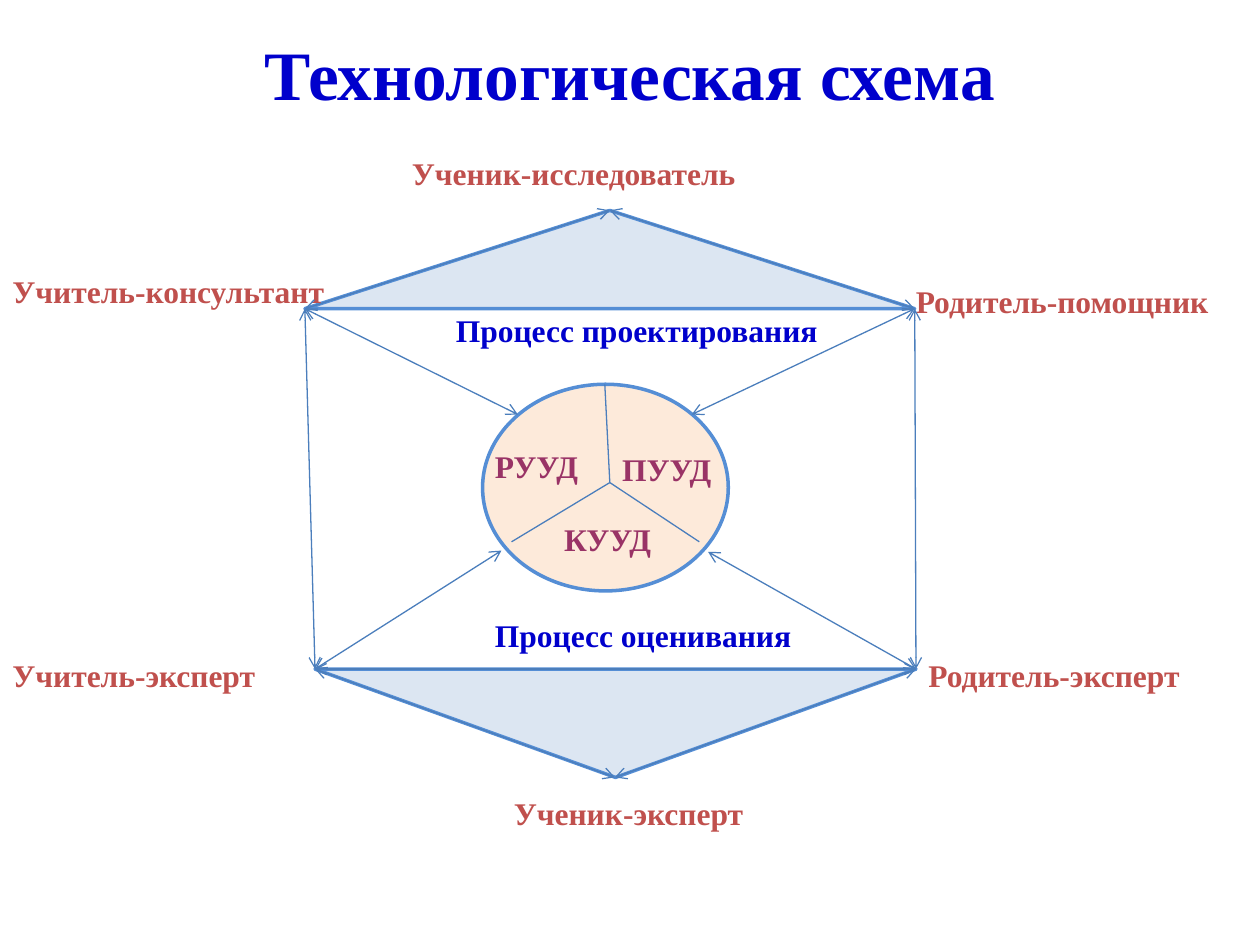
from lxml.etree import SubElement
from pptx import Presentation
from pptx.dml.color import RGBColor
from pptx.enum.shapes import MSO_CONNECTOR, MSO_SHAPE
from pptx.enum.text import MSO_ANCHOR, MSO_AUTO_SIZE, PP_ALIGN
from pptx.oxml.ns import qn
from pptx.util import Inches, Pt

THEME = {
    "font": "Times New Roman",
    "title_size": 39.6,
    "label_size": 18,
    "outline_width": 2,
    "link_width": 0.75,
    "heading": "0000CC",
    "role": "C0504D",
    "skill": "993366",
    "triangle": "DCE6F2",
    "circle": "FDEADA",
    "outline": "558ED5",
    "link": "4B7EBC",
}

TITLE = "Технологическая схема"

# text, theme colour, left, top, width
LABELS = [
    ("ПУУД", "skill", 4.84, 3.52, 1.16),
    ("КУУД", "skill", 4.38, 4.08, 1.04),
    ("РУУД", "skill", 3.83, 3.5, 0.93),
    ("Учитель-консультант", "role", 0, 2.11, 3.08),
    ("Учитель-эксперт", "role", 0, 5.16, 2.5),
    ("Ученик-исследователь", "role", 3.17, 1.17, 3.74),
    ("Ученик-эксперт", "role", 3.98, 6.25, 2.34),
    ("Родитель-эксперт", "role", 7.27, 5.16, 2.73),
    ("Родитель-помощник", "role", 7.17, 2.19, 3.17),
    ("Процесс проектирования", "heading", 3.52, 2.42, 3.57),
    ("Процесс оценивания", "heading", 3.83, 4.84, 3.05),
]
LABEL_HEIGHT = 0.4

# Corners of the two triangles
CONSULTANT, RESEARCHER, HELPER = (2.42, 2.45), (4.84, 1.67), (7.26, 2.45)
TEACHER_EXPERT, PUPIL_EXPERT, PARENT_EXPERT = (2.5, 5.31), (4.88, 6.17), (7.27, 5.31)

# shape, fill, left, top, width, height, rotation
SHAPES = [
    (MSO_SHAPE.ISOSCELES_TRIANGLE, "triangle", 2.42, 1.67, 4.84, 0.78, 0),
    (MSO_SHAPE.ISOSCELES_TRIANGLE, "triangle", 2.5, 5.31, 4.77, 0.86, 180),
    (MSO_SHAPE.FLOWCHART_CONNECTOR, "circle", 3.83, 3.05, 1.95, 1.64, 0),
]

HUB = (4.84, 3.83)
SECTOR_ENDS = [(4.8, 3.05), (4.06, 4.3), (5.55, 4.3)]

TWO_WAY_LINKS = [
    (CONSULTANT, (4.11, 3.29)),
    (HELPER, (5.49, 3.29)),
    (TEACHER_EXPERT, (3.98, 4.37)),
    (PARENT_EXPERT, (5.62, 4.38)),
    (CONSULTANT, RESEARCHER),
    (RESEARCHER, HELPER),
    (TEACHER_EXPERT, PARENT_EXPERT),
    (TEACHER_EXPERT, PUPIL_EXPERT),
    (PARENT_EXPERT, PUPIL_EXPERT),
    (HELPER, PARENT_EXPERT),
    (CONSULTANT, TEACHER_EXPERT),
]


def colour(name):
    return RGBColor.from_string(THEME[name])


def add_span(para, text, size, colour_name):
    span = para.add_run()
    span.text = text
    span.font.name = THEME["font"]
    span.font.size = Pt(THEME[size])
    span.font.bold = True
    span.font.color.rgb = colour(colour_name)


def set_title(page):
    box = page.shapes.title
    box.left, box.top, box.width, box.height = map(Inches, (0.5, 0.3, 9, 0.56))
    box.text_frame.vertical_anchor = MSO_ANCHOR.MIDDLE
    para = box.text_frame.paragraphs[0]
    para.alignment = PP_ALIGN.CENTER
    add_span(para, TITLE, "title_size", "heading")


def add_outlined(page, kind, fill, left, top, width, height, rotation):
    shape = page.shapes.add_shape(kind, *map(Inches, (left, top, width, height)))
    shape.rotation = rotation
    shape.shadow.inherit = False
    shape.fill.solid()
    shape.fill.fore_color.rgb = colour(fill)
    shape.line.color.rgb = colour("outline")
    shape.line.width = Pt(THEME["outline_width"])


def add_label(page, text, colour_name, left, top, width):
    box = page.shapes.add_textbox(*map(Inches, (left, top, width, LABEL_HEIGHT)))
    box.text_frame.word_wrap = True
    box.text_frame.auto_size = MSO_AUTO_SIZE.SHAPE_TO_FIT_TEXT
    add_span(box.text_frame.paragraphs[0], text, "label_size", colour_name)


def add_link(page, start, end, two_way=False):
    link = page.shapes.add_connector(MSO_CONNECTOR.STRAIGHT, *map(Inches, start + end))
    link.line.color.rgb = colour("link")
    link.line.width = Pt(THEME["link_width"])
    if two_way:
        for tag in ("a:headEnd", "a:tailEnd"):
            SubElement(link.line._get_or_add_ln(), qn(tag), type="arrow")
    SubElement(link._element.spPr, qn("a:effectLst"))


def main():
    deck = Presentation()
    deck.slide_width, deck.slide_height = Inches(10), Inches(7.5)
    page = deck.slides.add_slide(deck.slide_layouts.get_by_name("Title Only"))
    set_title(page)
    for shape in SHAPES:
        add_outlined(page, *shape)
    for end in SECTOR_ENDS:
        add_link(page, HUB, end)
    for label in LABELS:
        add_label(page, *label)
    for start, end in TWO_WAY_LINKS:
        add_link(page, start, end, two_way=True)
    deck.save("out.pptx")


if __name__ == "__main__":
    main()
